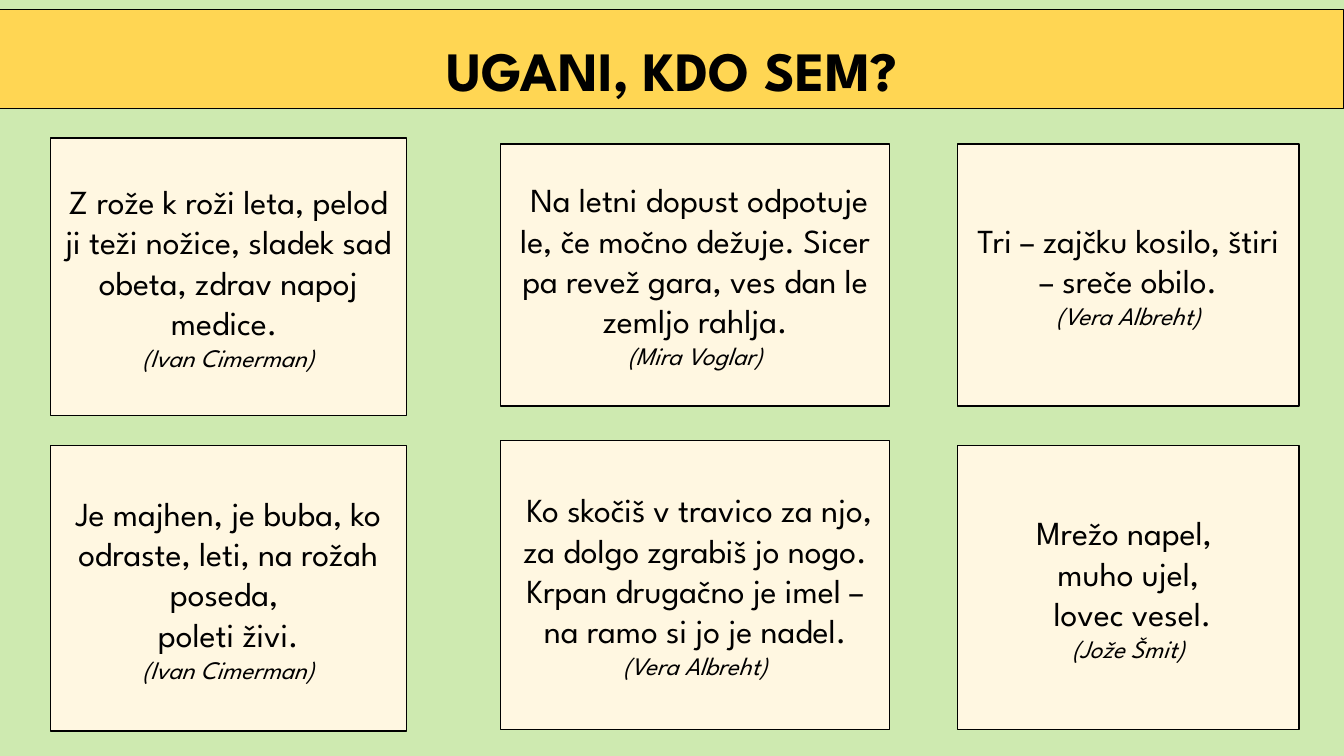
import pptx
import pptx.util
import pptx.dml.color
import pptx.enum.shapes
import pptx.enum.text

Cm = pptx.util.Cm
Pt = pptx.util.Pt
RGBColor = pptx.dml.color.RGBColor

GREEN = RGBColor(0xCE, 0xEA, 0xB0)
GOLD = RGBColor(0xFF, 0xD6, 0x53)
CREAM = RGBColor(0xFF, 0xF7, 0xE1)
BLACK = RGBColor(0, 0, 0)
FONT = "League Spartan"
WIDTH, HEIGHT = 33.87, 19.05

# Columns: left, width
LEFT, MID, RIGHT = (1.27, 8.97), (12.62, 9.8), (24.13, 8.61)

# Riddles: column, top, height, lines, author
RIDDLES = [
    (LEFT, 3.48, 6.99,
     ["Z rože k roži leta, pelod ji teži nožice, sladek sad obeta, "
      "zdrav napoj medice. "], "(Ivan Cimerman)"),
    (MID, 3.63, 6.6,
     [" Na letni dopust odpotuje le, če močno dežuje. Sicer pa revež gara, "
      "ves dan le zemljo rahlja."], "(Mira Voglar)"),
    (RIGHT, 3.63, 6.6,
     ["Tri – zajčku kosilo, štiri – sreče obilo."], "(Vera Albreht)"),
    (LEFT, 11.23, 7.19,
     ["Je majhen, je buba, ko odraste, leti, na rožah poseda, ",
      "poleti živi."], "(Ivan Cimerman)"),
    (MID, 11.1, 7.29,
     [" Ko skočiš v travico za njo, za dolgo zgrabiš jo nogo. "
      "Krpan drugačno je imel – na ramo si jo je nadel."], "(Vera Albreht)"),
    (RIGHT, 11.23, 7.16,
     ["Mrežo napel, ", "muho ujel,", " lovec vesel."], "(Jože Šmit)"),
]


def add_box(slide, box, fill, line):
    """Draw an outlined rectangle and return its text frame."""
    shape = slide.shapes.add_shape(
        pptx.enum.shapes.MSO_SHAPE.RECTANGLE, *map(Cm, box))
    shape.shadow.inherit = False
    shape.fill.solid()
    shape.fill.fore_color.rgb = fill
    shape.line.color.rgb = BLACK
    shape.line.width = Pt(line)
    frame = shape.text_frame
    frame.word_wrap = True
    frame.vertical_anchor = pptx.enum.text.MSO_ANCHOR.MIDDLE
    return frame


def add_run(para, text, size, bold=False, italic=False):
    para.alignment = pptx.enum.text.PP_ALIGN.CENTER
    run = para.add_run()
    run.text = text
    font = run.font
    font.name, font.size = FONT, Pt(size)
    font.bold, font.italic = bold, italic
    font.color.rgb = BLACK


def add_title(slide, box):
    para = add_box(slide, box, GOLD, 0.75).paragraphs[0]
    para.line_spacing = 1.3
    add_run(para, "UGANI, KDO SEM?", 39.6, bold=True)


def add_card(slide, box, lines, author):
    frame = add_box(slide, box, CREAM, 1)
    para = frame.paragraphs[0]
    for line in lines:
        add_run(para, line, 24)
        para = frame.add_paragraph()
    add_run(para, author, 18, italic=True)


def main():
    deck = pptx.Presentation()
    deck.slide_width, deck.slide_height = Cm(WIDTH), Cm(HEIGHT)
    slide = deck.slides.add_slide(deck.slide_layouts[6])
    slide.background.fill.solid()
    slide.background.fill.fore_color.rgb = GREEN

    # Title band
    add_title(slide, (0, 0.23, WIDTH, 2.51))

    # Riddle cards
    for (left, width), top, height, lines, author in RIDDLES:
        add_card(slide, (left, top, width, height), lines, author)

    deck.save("out.pptx")


if __name__ == "__main__":
    main()
